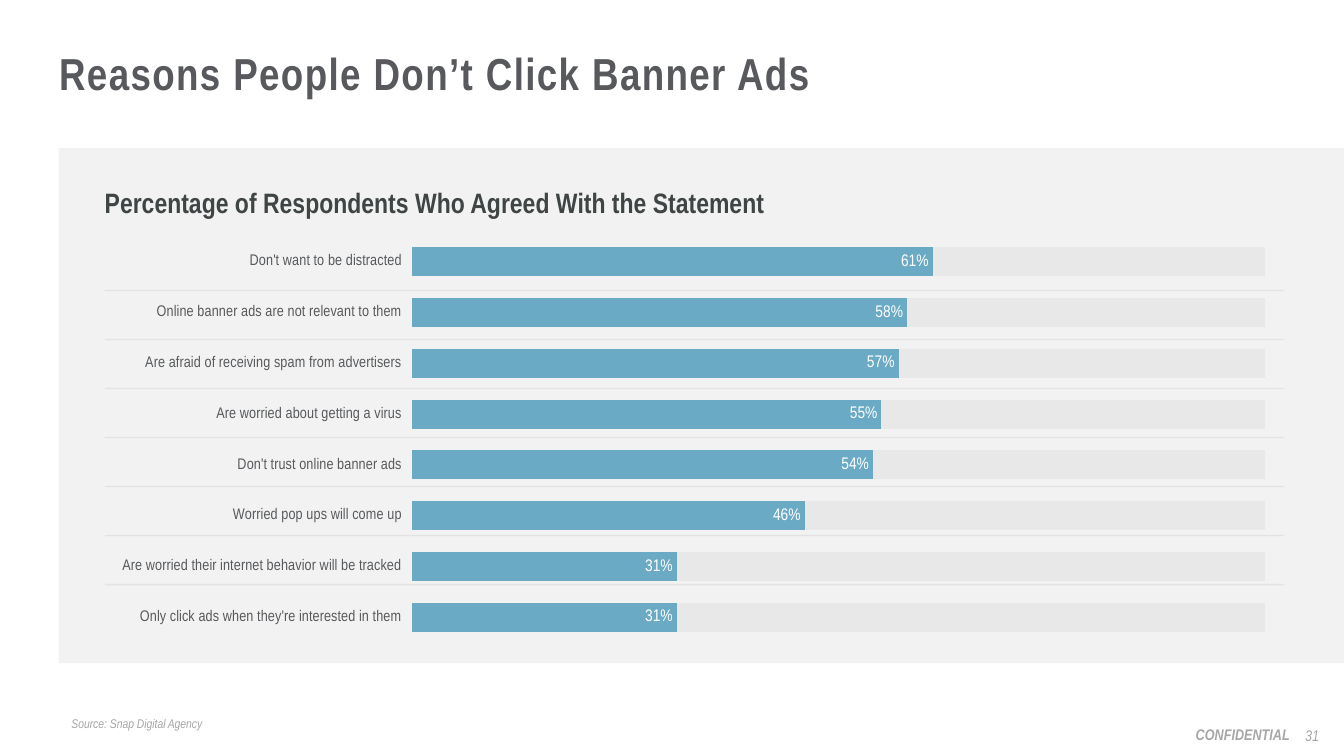
from lxml import etree
from pptx import Presentation
from pptx.chart.data import CategoryChartData
from pptx.dml.color import RGBColor
from pptx.enum.chart import XL_CHART_TYPE, XL_LABEL_POSITION, XL_TICK_LABEL_POSITION, XL_TICK_MARK
from pptx.enum.shapes import MSO_CONNECTOR, MSO_SHAPE
from pptx.enum.text import MSO_ANCHOR, PP_ALIGN
from pptx.oxml.ns import qn
from pptx.util import Cm, Pt

BAR_STACKED_100 = XL_CHART_TYPE.BAR_STACKED_100
INSIDE_END = XL_LABEL_POSITION.INSIDE_END
LABELS_LOW = XL_TICK_LABEL_POSITION.LOW
NO_TICKS = XL_TICK_MARK.NONE
STRAIGHT = MSO_CONNECTOR.STRAIGHT
RECTANGLE = MSO_SHAPE.RECTANGLE
TOP, MIDDLE = MSO_ANCHOR.TOP, MSO_ANCHOR.MIDDLE
LEFT, CENTER, RIGHT = PP_ALIGN.LEFT, PP_ALIGN.CENTER, PP_ALIGN.RIGHT

GRAY, INK, DARK, WHITE = "A6A6A6", "57595C", "3F4444", "FFFFFF"
BLUE, TRACK, RULE, PANEL = "6AAAC5", "E8E8E8", "D9D9D9", "BFBFBF"

REASONS = {
    "Don't want to be distracted": 0.61,
    "Online banner ads are not relevant to them": 0.58,
    "Are afraid of receiving spam from advertisers": 0.57,
    "Are worried about getting a virus": 0.55,
    "Don't trust online banner ads": 0.54,
    "Worried pop ups will come up": 0.46,
    "Are worried their internet behavior will be tracked": 0.31,
    "Only click ads when they're interested in them": 0.31,
}


def rgb(value):
    return RGBColor.from_string(value)


def set_opacity(shape, percent):
    for color in shape._element.spPr.iter(qn("a:srgbClr")):
        etree.SubElement(color, qn("a:alpha")).set("val", str(percent * 1000))


class SlideBuilder:
    """Draw styled elements on the current slide."""

    font_name = "Arial Narrow"

    def __init__(self, slide):
        self.slide = slide

    def style(self, font, size, color, **formats):
        formats = {"name": self.font_name, "size": Pt(size), **formats}
        for attribute, value in formats.items():
            setattr(font, attribute, value)
        font.color.rgb = rgb(color)

    def fill_text(self, shape, text, size, color, align=LEFT, anchor=TOP,
                  line_spacing=None, tracking=None, **formats):
        frame = shape.text_frame
        frame.word_wrap = True
        frame.vertical_anchor = anchor
        paragraph = frame.paragraphs[0]
        paragraph.alignment = align
        paragraph.line_spacing = line_spacing
        run = paragraph.add_run()
        run.text = text
        self.style(run.font, size, color, **formats)
        if tracking:
            run._r.get_or_add_rPr().set("spc", str(tracking * 100))

    def text(self, box, *content, **formats):
        shape = self.slide.shapes.add_textbox(*map(Cm, box))
        self.fill_text(shape, *content, **formats)

    def rectangle(self, box, fill=None, opacity=100, line=None):
        shape = self.slide.shapes.add_shape(RECTANGLE, *map(Cm, box))
        shape.shadow.inherit = False
        if fill:
            shape.fill.solid()
            shape.fill.fore_color.rgb = rgb(fill)
            set_opacity(shape, opacity)
        else:
            shape.fill.background()
        if line:
            shape.line.color.rgb = rgb(line)
            shape.line.width = Pt(1.5)
        else:
            shape.line.fill.background()
        return shape

    def dividers(self, left, right, top, bottom, count):
        group = self.slide.shapes.add_group_shape()
        step = (bottom - top) / (count - 1)
        for index in range(count):
            y = Cm(top + index * step)
            line = group.shapes.add_connector(STRAIGHT, Cm(left), y, Cm(right), y)
            line.line.color.rgb = rgb(RULE)
            line.line.width = Pt(1)
            set_opacity(line, 60)
            etree.SubElement(line._element.spPr, qn("a:effectLst"))

    def bar_chart(self, box, shares, plot_layout):
        data = CategoryChartData(number_format="0%")
        data.categories = list(reversed(shares))
        values = list(reversed(shares.values()))
        data.add_series("Series 1", values)
        data.add_series("Series 2", [round(1 - value, 2) for value in values])
        chart = self.slide.shapes.add_chart(BAR_STACKED_100, *map(Cm, box), data).chart
        chart.has_legend = False
        chart.has_title = False
        self.style(chart.font, 10, DARK)
        self.axes(chart)
        plot = chart.plots[0]
        for attribute, value in {"gap_width": 75, "overlap": 100,
                                 "vary_by_categories": False}.items():
            setattr(plot, attribute, value)
        for series, color in zip(plot.series, (BLUE, TRACK)):
            series.format.fill.solid()
            series.format.fill.fore_color.rgb = rgb(color)
        labels = plot.series[0].data_labels
        for attribute, value in {"show_value": True, "position": INSIDE_END,
                                 "number_format": "0%",
                                 "number_format_is_linked": False}.items():
            setattr(labels, attribute, value)
        self.style(labels.font, 12, WHITE)
        self.place_plot(chart, plot_layout)

    def axes(self, chart):
        category_axis, value_axis = chart.category_axis, chart.value_axis
        category_formats = {"major_tick_mark": NO_TICKS, "minor_tick_mark": NO_TICKS,
                            "tick_label_position": LABELS_LOW,
                            "has_major_gridlines": False}
        value_formats = {"visible": False, "has_major_gridlines": False,
                         "minimum_scale": 0, "maximum_scale": 1}
        for axis, formats in ((category_axis, category_formats), (value_axis, value_formats)):
            for attribute, value in formats.items():
                setattr(axis, attribute, value)
        category_axis.format.line.fill.background()
        self.style(category_axis.tick_labels.font, 11, INK)

    def place_plot(self, chart, plot_layout):
        plot_area = chart._chartSpace.find(".//" + qn("c:plotArea"))
        for layout in plot_area.findall(qn("c:layout")):
            plot_area.remove(layout)
        layout = etree.Element(qn("c:layout"))
        plot_area.insert(0, layout)
        manual = etree.SubElement(layout, qn("c:manualLayout"))
        settings = {"layoutTarget": "inner", "xMode": "edge", "yMode": "edge", **plot_layout}
        for name, value in settings.items():
            etree.SubElement(manual, qn("c:" + name)).set("val", str(value))


def main():
    presentation = Presentation()
    presentation.slide_width = Cm(33.87)
    presentation.slide_height = Cm(19.05)
    slide = presentation.slides.add_slide(presentation.slide_layouts[6])
    builder = SlideBuilder(slide)

    builder.text((29.03, 18.14, 3.73, 0.74), "CONFIDENTIAL", 11, GRAY,
                 align=RIGHT, bold=True, italic=True)
    builder.rectangle((1.48, 3.73, 32.39, 12.98), fill=PANEL, opacity=20)
    builder.text((32.56, 18.01, 1.02, 1.02), "31", 11, GRAY,
                 align=CENTER, anchor=MIDDLE, italic=True)
    builder.text((1.24, 1.19, 26.72, 2.36), "Reasons People Don’t Click Banner Ads",
                 32, INK, line_spacing=0.9, tracking=1, bold=True)
    source = builder.rectangle((1.55, 17.91, 21.72, 0.64), line=WHITE)
    builder.fill_text(source, "Source: Snap Digital Agency", 9, GRAY,
                      anchor=MIDDLE, italic=True)
    builder.text((2.39, 4.55, 20.04, 1.12),
                 "Percentage of Respondents Who Agreed With the Statement",
                 20, DARK, bold=True)
    builder.bar_chart((2.62, 5.74, 29.87, 10.67), REASONS,
                      {"x": 0.26, "y": 0.02, "w": 0.72, "h": 0.96})
    builder.dividers(2.64, 32.36, 7.32, 14.73, len(REASONS) - 1)

    presentation.save("out.pptx")


if __name__ == "__main__":
    main()
